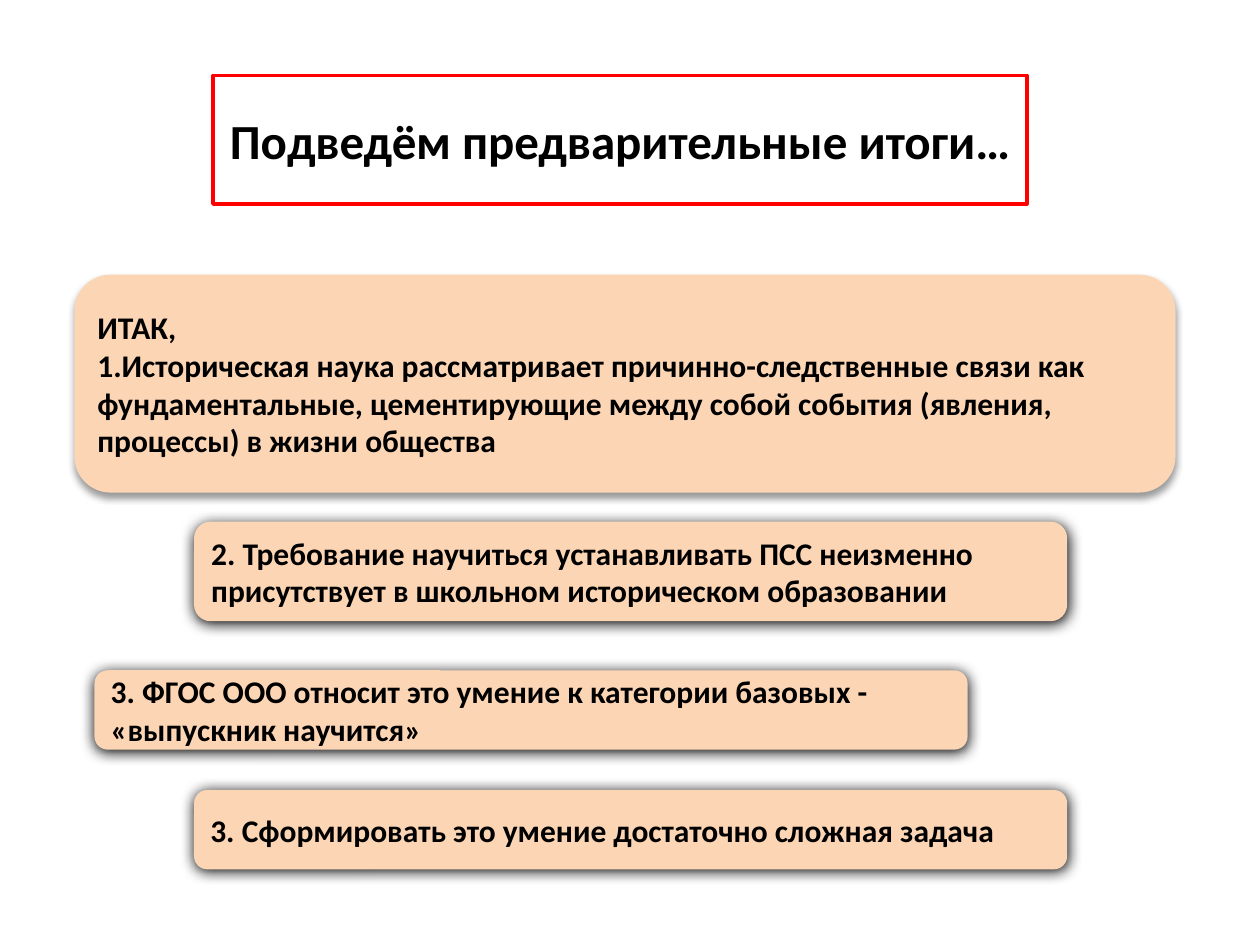
import pptx
import pptx.util
import pptx.dml.color
import pptx.enum.shapes
import pptx.enum.text
from lxml import etree

BLACK = pptx.dml.color.RGBColor(0x00, 0x00, 0x00)
RED = pptx.dml.color.RGBColor(0xFF, 0x00, 0x00)
PEACH = pptx.dml.color.RGBColor(0xFC, 0xD5, 0xB5)
NS = "http://schemas.openxmlformats.org/drawingml/2006/main"
SHAPE = pptx.enum.shapes.MSO_SHAPE
ALIGN = pptx.enum.text.PP_ALIGN

prs = pptx.Presentation()
prs.slide_width = pptx.util.Inches(10)
prs.slide_height = pptx.util.Inches(7.5)
COL = prs.slide_width / 100
ROW = prs.slide_height / 75
s = prs.slides.add_slide(prs.slide_layouts[6])


def add_box(text, kind=SHAPE.ROUNDED_RECTANGLE, at=(0, 0, 10, 10), fill=None,
            line=None, size=18, align=ALIGN.LEFT):
    """Add a shape with bold text; at is left, top, width, height in grid cells."""
    cells = [round(n * unit) for n, unit in zip(at, (COL, ROW, COL, ROW))]
    sp = s.shapes.add_shape(kind, *cells)
    sp.shadow.inherit = False
    if fill is None:
        sp.fill.background()
    else:
        sp.fill.solid()
        sp.fill.fore_color.rgb = fill
    if line is None:
        sp.line.fill.background()
    else:
        sp.line.color.rgb = line
        sp.line.width = pptx.util.Pt(2)
    tf = sp.text_frame
    tf.word_wrap = True
    tf.vertical_anchor = pptx.enum.text.MSO_ANCHOR.MIDDLE
    tf.text = text
    for p in tf.paragraphs:
        p.alignment = align
        p.font.name = "Calibri"
        p.font.size = pptx.util.Pt(size)
        p.font.bold = True
        p.font.color.rgb = BLACK
    return sp


def add_shadow(sp, alpha, blur, dist):
    """Give a shape a black downward shadow; alpha in percent, lengths in points."""
    effects = sp.element.spPr.find(f"{{{NS}}}effectLst")
    shadow = etree.SubElement(
        effects, f"{{{NS}}}outerShdw", blurRad=str(pptx.util.Pt(blur)),
        dist=str(pptx.util.Pt(dist)), dir=str(90 * 60000), rotWithShape="0")
    color = etree.SubElement(shadow, f"{{{NS}}}srgbClr", val=str(BLACK))
    etree.SubElement(color, f"{{{NS}}}alpha", val=str(alpha * 1000))


intro = add_box(
    "ИТАК,\n1.Историческая наука рассматривает причинно-следственные связи как "
    "фундаментальные, цементирующие между собой события (явления, процессы) "
    "в жизни общества",
    at=(5.9, 21.8, 87.4, 17.3), fill=PEACH)
add_shadow(intro, alpha=40, blur=4, dist=3)

conclusions = [
    (15.4, 41.4, 7.9, "2. Требование научиться устанавливать ПСС неизменно "
                      "присутствует в школьном историческом образовании"),
    (15.4, 62.7, 6.3, "3. Сформировать это умение достаточно сложная задача"),
    (7.5, 53.2, 6.3, "3. ФГОС ООО относит это умение к категории базовых - "
                     "«выпускник научится»"),
]
for left, top, height, text in conclusions:
    sp = add_box(text, at=(left, top, 69.3, height), fill=PEACH)
    add_shadow(sp, alpha=100, blur=8.5, dist=1)

add_box("Подведём предварительные итоги…", kind=SHAPE.RECTANGLE,
        at=(16.9, 6, 64.6, 10.2), line=RED, size=28, align=ALIGN.CENTER)

prs.save("out.pptx")
